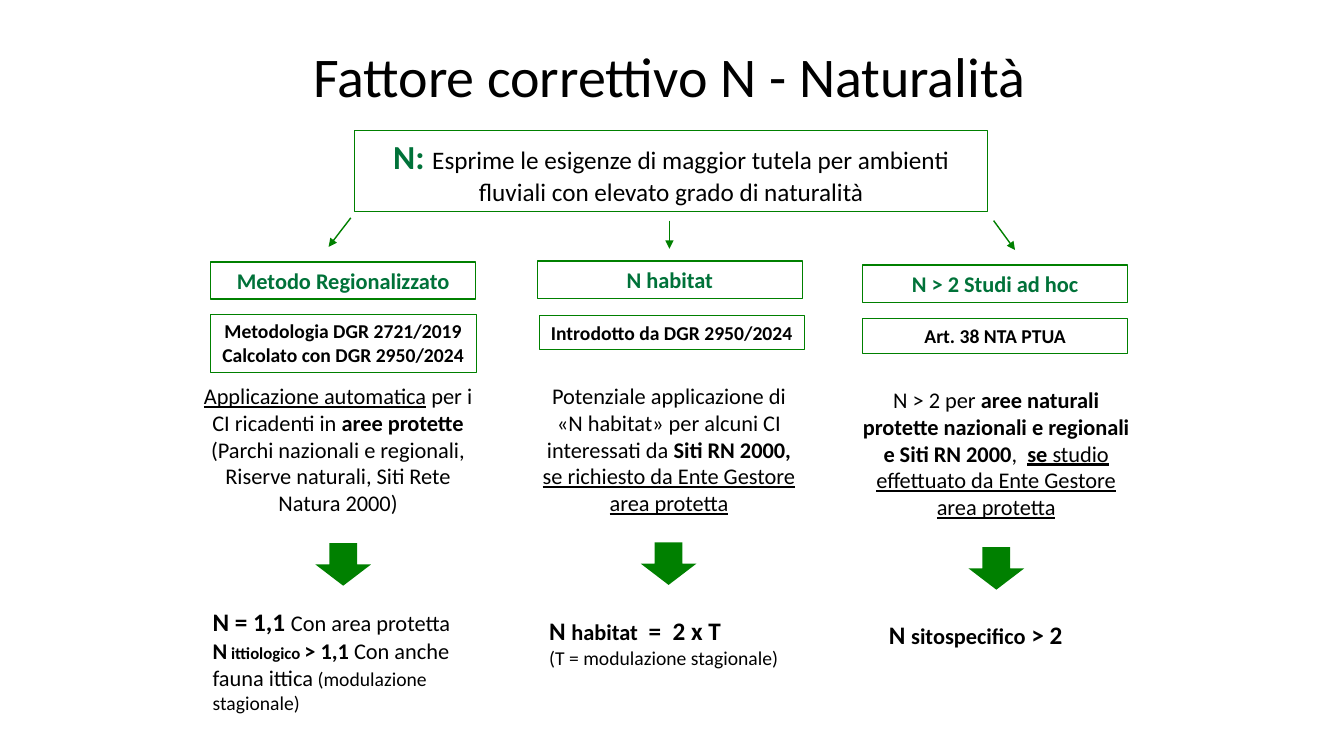
from lxml.etree import SubElement
from pptx import Presentation
from pptx.dml.color import RGBColor
from pptx.enum.shapes import MSO_CONNECTOR, MSO_SHAPE
from pptx.enum.text import MSO_ANCHOR as ANCHOR, MSO_AUTO_SIZE as AUTO, PP_ALIGN as ALIGN
from pptx.oxml.ns import qn
from pptx.util import Cm, Pt

BLACK = RGBColor(0x00, 0x00, 0x00)
WHITE = RGBColor(0xFF, 0xFF, 0xFF)
GREEN = RGBColor(0x00, 0x80, 0x00)
DARK_GREEN = RGBColor(0x00, 0x72, 0x39)

BOX_WIDTH = 6.68

# Positions are (left, top) or (left, top, width, height) in cm.
# A run is (text, size, style), where style may hold "b" and "u".
COLUMNS = [
    {
        "pointer": (8.84, 5.49, 8.28, 6.22),
        "heading": ("Metodo Regionalizzato", 5.31, 6.6),
        "source": (["Metodologia DGR 2721/2019", "Calcolato con DGR 2950/2024"], 5.31, 7.92, 1.45),
        "text_at": (4.67, 9.5, 7.7, 3.68),
        "text": [("Applicazione automatica", 16, "u"), (" per i CI ricadenti in ", 16, ""),
                 ("aree protette", 16, "b"),
                 (" (Parchi nazionali e regionali, Riserve naturali, Siti Rete Natura 2000)", 16, "")],
        "arrow": (7.95, 13.69),
        "result_at": (5.11, 15.16, 7.47, 3.07),
        "result": [
            [("N = 1,1 ", 18, "b"), ("Con area protetta", 16, "")],
            [("N", 16, "b"), (" ittiologico ", 12, "b"), ("> 1,1 ", 16, "b"),
             ("Con anche fauna ittica", 16, ""), (" (modulazione stagionale)", 14, "")],
        ],
    },
    {
        "pointer": (16.87, 5.56, 16.87, 6.27),
        "heading": ("N habitat", 13.54, 6.58),
        "source": (["Introdotto da DGR 2950/2024"], 13.59, 7.95, 0.86),
        "text_at": (13.28, 9.5, 7.16, 3.68),
        "text": [("Potenziale applicazione di «N habitat» per alcuni CI interessati da ", 16, ""),
                 ("Siti RN 2000, ", 16, "b"),
                 ("se richiesto da Ente Gestore area protetta", 16, "u")],
        "arrow": (16.15, 13.67),
        "result_at": (13.59, 15.39, 7.16, 1.63),
        "result": [
            [("N ", 18, "b"), ("habitat ", 16, "b"), (" =  2 x T", 18, "b")],
            [("(T = modulazione stagionale)", 14, "")],
        ],
    },
    {
        "pointer": (25.04, 5.56, 25.58, 6.3),
        "heading": ("N > 2 Studi ad hoc", 21.74, 6.68),
        "source": (["Art. 38 NTA PTUA"], 21.74, 8.03, 0.86),
        "text_at": (21.31, 9.6, 7.59, 3.68),
        "text": [("N > 2 per ", 16, ""),
                 ("aree naturali protette nazionali e regionali e Siti RN 2000", 16, "b"),
                 (",  ", 16, ""), ("se ", 16, "bu"),
                 ("studio effettuato da Ente Gestore area protetta", 16, "u")],
        "arrow": (24.41, 13.79),
        "result_at": (22.15, 15.49, 5.89, 1.02),
        "result": [[("N ", 18, "b"), ("sitospecifico", 16, "b"), (" > 2", 18, "b")]],
    },
]


def write(tf, paragraphs, align, anchor=ANCHOR.TOP, auto=AUTO.SHAPE_TO_FIT_TEXT):
    """Fill a text frame; a fourth item in a run is its colour."""
    tf.word_wrap = True
    tf.auto_size = auto
    tf.vertical_anchor = anchor
    for i, runs in enumerate(paragraphs):
        p = tf.paragraphs[0] if i == 0 else tf.add_paragraph()
        p.alignment = align
        for text, size, style, *color in runs:
            r = p.add_run()
            r.text = text
            r.font.name = "Calibri"
            r.font.size = Pt(size)
            r.font.bold = "b" in style
            r.font.underline = "u" in style
            r.font.color.rgb = color[0] if color else BLACK


def add_text(s, at, paragraphs, align=ALIGN.LEFT, **options):
    tb = s.shapes.add_textbox(*map(Cm, at))
    write(tb.text_frame, paragraphs, align, **options)
    return tb


def add_box(s, at, paragraphs, line_width, **options):
    sp = s.shapes.add_shape(MSO_SHAPE.RECTANGLE, *map(Cm, at))
    sp.shadow.inherit = False
    sp.fill.solid()
    sp.fill.fore_color.rgb = WHITE
    sp.line.color.rgb = GREEN
    sp.line.width = Pt(line_width)
    write(sp.text_frame, paragraphs, ALIGN.CENTER, **options)


def add_down_arrow(s, left, top):
    sp = s.shapes.add_shape(MSO_SHAPE.DOWN_ARROW, Cm(left), Cm(top), Cm(1.4), Cm(1.07))
    sp.shadow.inherit = False
    sp.fill.solid()
    sp.fill.fore_color.rgb = GREEN
    sp.line.fill.background()


def add_pointer(s, ends):
    line = s.shapes.add_connector(MSO_CONNECTOR.STRAIGHT, *map(Cm, ends))
    line.line.color.rgb = GREEN
    line.line.width = Pt(1)
    SubElement(line.line._get_or_add_ln(), qn("a:tailEnd"), type="triangle")
    SubElement(line._element.spPr, qn("a:effectLst"))


def add_column(s, col):
    add_pointer(s, col["pointer"])
    heading, left, top = col["heading"]
    add_box(s, (left, top, BOX_WIDTH, 0.94), [[(heading, 16, "b", DARK_GREEN)]], 1)
    lines, left, top, height = col["source"]
    add_box(s, (left, top, BOX_WIDTH, height), [[(text, 14, "b")] for text in lines], 0.25)
    add_text(s, col["text_at"], [col["text"]], ALIGN.CENTER)
    add_down_arrow(s, *col["arrow"])
    add_text(s, col["result_at"], col["result"])


def main():
    prs = Presentation()
    prs.slide_width, prs.slide_height = Cm(33.87), Cm(19.05)
    s = prs.slides.add_slide(prs.slide_layouts[6])

    title = add_text(s, (6.07, 0.81, 21.59, 2.08),
                     [[("Fattore correttivo N - Naturalità", 40, "")]],
                     ALIGN.CENTER, anchor=ANCHOR.BOTTOM, auto=AUTO.NONE)
    title.text_frame.paragraphs[0].line_spacing = 0.9

    definition = [("N: ", 24, "b", DARK_GREEN),
                  ("Esprime le esigenze di maggior tutela per ambienti fluviali "
                   "con elevato grado di naturalità", 18, "")]
    add_box(s, (8.94, 3.28, 15.95, 2.06), [definition], 0.75, anchor=ANCHOR.MIDDLE)

    for col in COLUMNS:
        add_column(s, col)
    prs.save("out.pptx")


if __name__ == "__main__":
    main()
